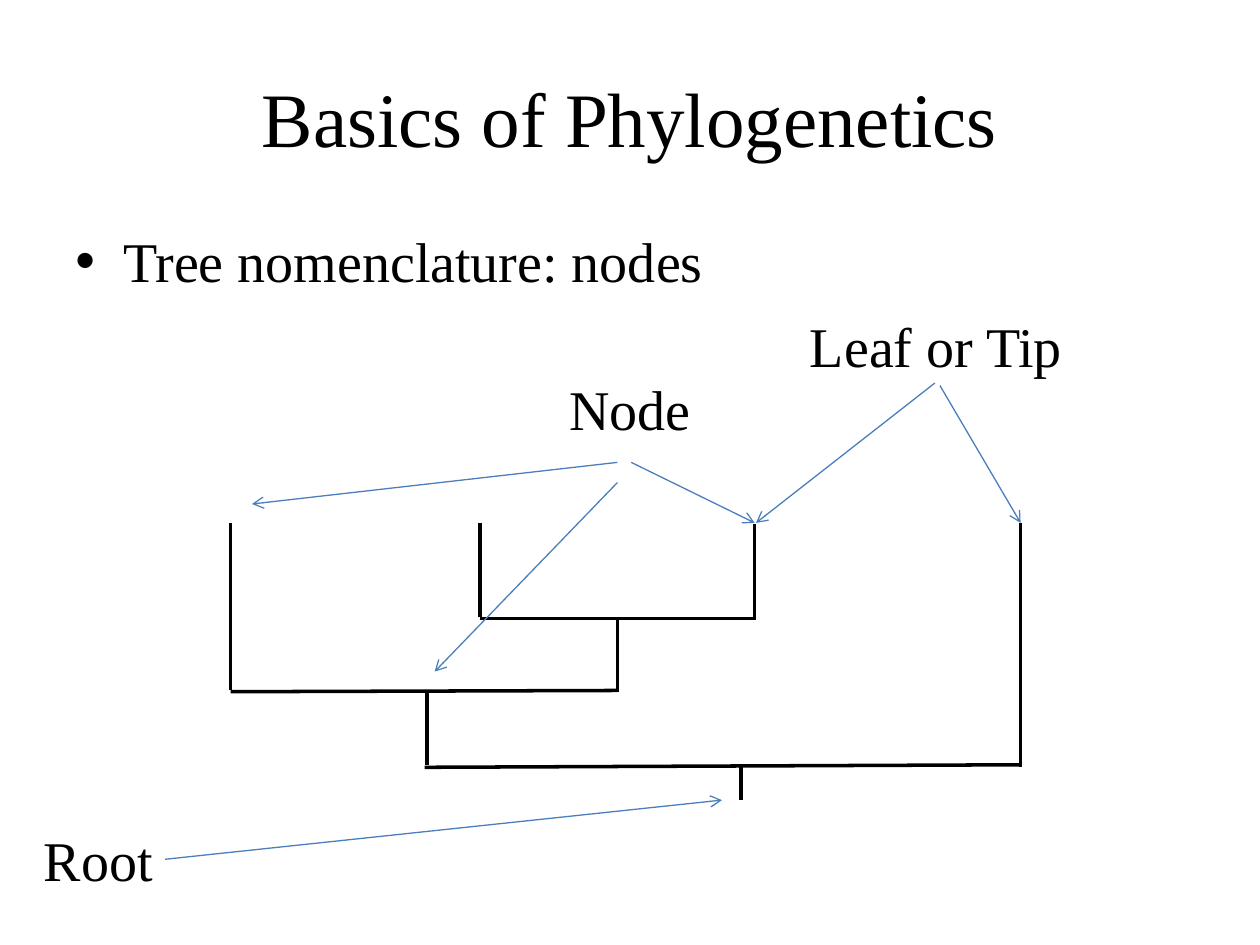
from dataclasses import dataclass

from lxml import etree
from pptx import Presentation
from pptx.dml.color import RGBColor
from pptx.enum.shapes import MSO_CONNECTOR
from pptx.enum.text import MSO_ANCHOR, MSO_AUTO_SIZE, PP_ALIGN
from pptx.oxml.ns import qn
from pptx.util import Inches, Pt

STRAIGHT = MSO_CONNECTOR.STRAIGHT
LEFT, CENTER = PP_ALIGN.LEFT, PP_ALIGN.CENTER
TOP, MIDDLE = MSO_ANCHOR.TOP, MSO_ANCHOR.MIDDLE
FIT, FIXED = MSO_AUTO_SIZE.SHAPE_TO_FIT_TEXT, MSO_AUTO_SIZE.NONE
FONT, BLACK, BLUE = "Times New Roman", "000000", "4B7EBC"


@dataclass
class Segment:
    x1: float
    y1: float
    x2: float
    y2: float


@dataclass
class Label:
    text: str
    x: float
    y: float
    w: float


BRANCHES = [
    Segment(1.83, 4.15, 1.83, 5.48),
    Segment(3.81, 4.15, 3.81, 4.9),
    Segment(5.99, 4.16, 5.99, 4.91),
    Segment(8.1, 4.15, 8.1, 6.09),
    Segment(3.81, 4.91, 6, 4.91),
    Segment(1.83, 5.49, 4.9, 5.48),
    Segment(4.9, 4.91, 4.9, 5.49),
    Segment(3.39, 5.49, 3.39, 6.07),
    Segment(3.37, 6.09, 8.1, 6.07),
    Segment(5.88, 6.07, 5.88, 6.35),
]
POINTERS = [
    Segment(4.9, 3.67, 2, 4),
    Segment(5.01, 3.67, 5.99, 4.15),
    Segment(4.9, 3.83, 3.45, 5.33),
    Segment(7.46, 3.06, 8.1, 4.15),
    Segment(7.42, 3.04, 6, 4.15),
    Segment(1.31, 6.82, 5.73, 6.35),
]
LABELS = [
    Label("Node", 4.42, 2.92, 1.19),
    Label("Leaf or Tip", 6.33, 2.42, 2.25),
    Label("Root", 0.25, 6.5, 1.1),
]


def rgb(color: str) -> RGBColor:
    return RGBColor.from_string(color)


def write(sp, text: str, *, size: float = 32, align=LEFT, anchor=TOP,
          wrap: bool = True, fit=FIXED, bullet: bool = False) -> None:
    tf = sp.text_frame
    tf.word_wrap = wrap
    tf.auto_size = fit
    tf.vertical_anchor = anchor
    p = tf.paragraphs[0]
    p.alignment = align
    r = p.add_run()
    r.text = text
    r.font.name = FONT
    r.font.size = Pt(size)
    r.font.color.rgb = rgb(BLACK)
    if bullet:
        pPr = p._p.get_or_add_pPr()
        pPr.set("marL", str(Inches(0.38)))
        pPr.set("indent", str(Inches(-0.38)))
        etree.SubElement(pPr, qn("a:buFont"), typeface="Arial")
        etree.SubElement(pPr, qn("a:buChar"), char="•")


def add_line(slide, seg: Segment, color: str, width: float, arrow: bool = False) -> None:
    sp = slide.shapes.add_connector(
        STRAIGHT, Inches(seg.x1), Inches(seg.y1), Inches(seg.x2), Inches(seg.y2))
    sp.line.color.rgb = rgb(color)
    sp.line.width = Pt(width)
    if arrow:
        etree.SubElement(sp.line._get_or_add_ln(), qn("a:tailEnd"), type="arrow")
    etree.SubElement(sp._element.spPr, qn("a:effectLst"))


def add_label(slide, label: Label) -> None:
    sp = slide.shapes.add_textbox(
        Inches(label.x), Inches(label.y), Inches(label.w), Inches(0.64))
    write(sp, label.text, wrap=False, fit=FIT)


def main() -> None:
    prs = Presentation()
    prs.slide_width, prs.slide_height = Inches(10), Inches(7.5)
    slide = prs.slides.add_slide(prs.slide_layouts[5])

    title = slide.shapes.title
    title.left, title.top = Inches(0.5), Inches(0.3)
    title.width, title.height = Inches(9), Inches(1.25)
    write(title, "Basics of Phylogenetics", size=44, align=CENTER, anchor=MIDDLE)

    body = slide.shapes.add_textbox(Inches(0.5), Inches(1.75), Inches(9), Inches(4.95))
    write(body, "Tree nomenclature: nodes", bullet=True)

    for branch in BRANCHES:
        add_line(slide, branch, BLACK, 2)
    for label in LABELS:
        add_label(slide, label)
    for pointer in POINTERS:
        add_line(slide, pointer, BLUE, 0.75, arrow=True)

    prs.save("out.pptx")


if __name__ == "__main__":
    main()
